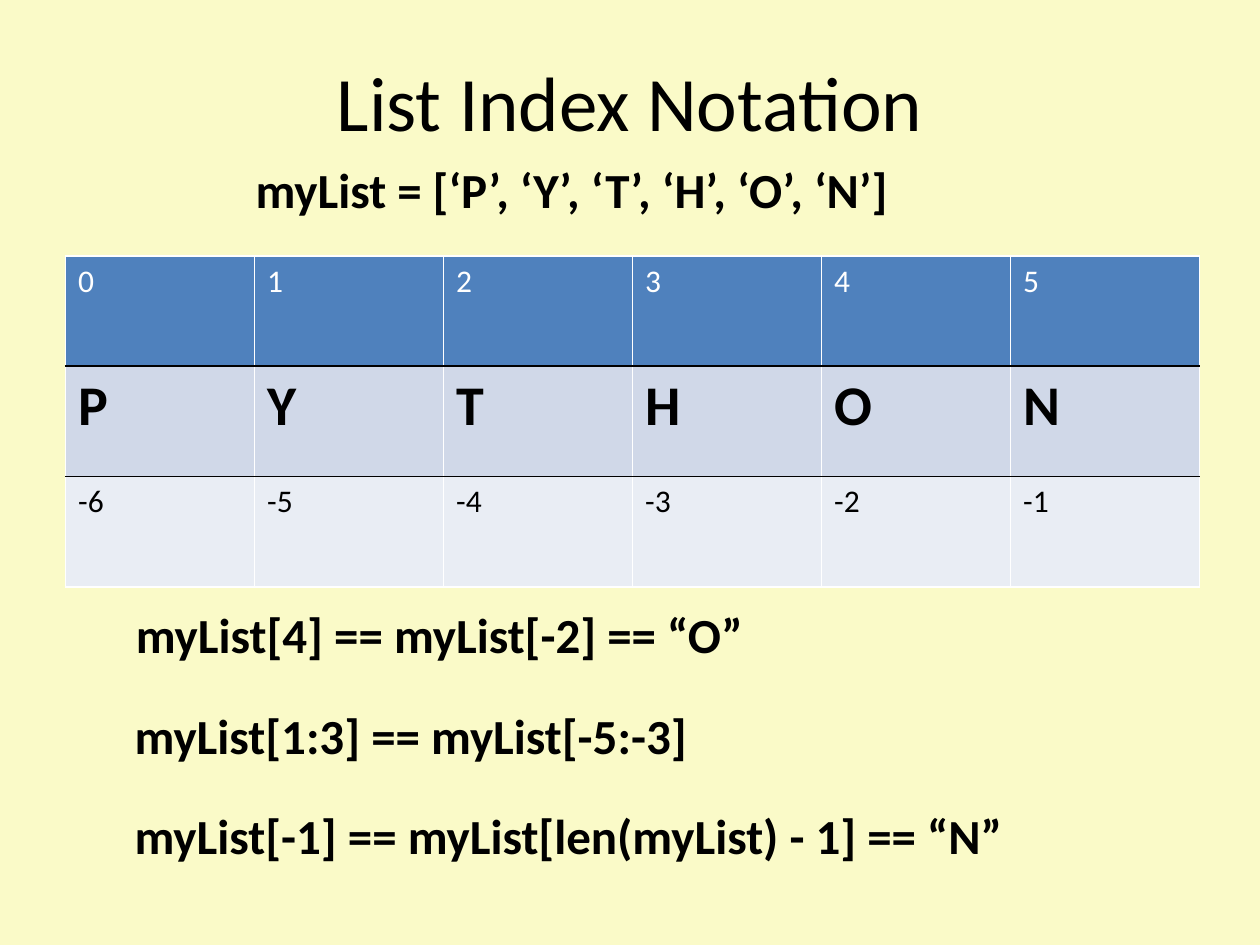
from dataclasses import dataclass

from lxml.etree import SubElement as Sub
from pptx import Presentation as Deck
from pptx.dml.color import RGBColor as Color
from pptx.enum.text import MSO_ANCHOR as Anchor, PP_ALIGN as Align
from pptx.oxml.ns import qn
from pptx.util import Inches as In, Pt


@dataclass(frozen=True)
class Theme:
    font: str = "Calibri"
    back: str = "FAFAC8"
    ink: str = "000000"
    white: str = "FFFFFF"
    head: str = "4F81BD"
    band: str = "D0D8E8"
    pale: str = "E9EDF4"
    title: int = 44
    big: int = 32
    code: int = 28
    small: int = 18
    line: int = 1


def write(frame, text, *, font, size, color, bold=False, align=Align.LEFT):
    para = frame.paragraphs[0]
    para.alignment = align
    run = para.add_run()
    run.text = text
    run.font.name = font
    run.font.size = Pt(size)
    run.font.bold = bold
    run.font.color.rgb = Color.from_string(color)


class Page:
    def __init__(self, deck, theme):
        self.theme = theme
        self.slide = deck.slides.add_slide(deck.slide_layouts[6])
        fill = self.slide.background.fill
        fill.solid()
        fill.fore_color.rgb = Color.from_string(theme.back)

    def text(self, text, left, top, width, height, *, anchor=Anchor.TOP, **style):
        box = self.slide.shapes.add_textbox(In(left), In(top), In(width), In(height))
        frame = box.text_frame
        frame.word_wrap = True
        frame.vertical_anchor = anchor
        write(frame, text, font=self.theme.font, color=self.theme.ink, **style)

    def edge(self, cell, top, base):
        props = cell._tc.get_or_add_tcPr()
        white = self.theme.white
        sides = {"L": white, "R": white, "T": top, "B": base}
        for side, color in sides.items():
            line = Sub(props, qn(f"a:ln{side}"), w=str(Pt(self.theme.line)))
            fill = Sub(line, qn("a:solidFill"))
            Sub(fill, qn("a:srgbClr"), val=color)

    def table(self, rows, left, top, width, height):
        count = len(rows[0][0])
        table = self.slide.shapes.add_table(
            len(rows), count, In(left), In(top), In(width), In(height)
        ).table
        for y, (words, fill, top, base, style) in enumerate(rows):
            for x, word in enumerate(words):
                cell = table.cell(y, x)
                self.edge(cell, top, base)
                cell.fill.solid()
                cell.fill.fore_color.rgb = Color.from_string(fill)
                write(cell.text_frame, word, font=self.theme.font, **style)


def main():
    theme = Theme()
    deck = Deck()
    deck.slide_width, deck.slide_height = In(10), In(7.5)
    page = Page(deck, theme)

    page.text("List Index Notation", 0.5, 0.17, 9, 1.25, size=theme.title,
              align=Align.CENTER, anchor=Anchor.MIDDLE)

    word = "PYTHON"
    count = len(word)
    ink, white = theme.ink, theme.white
    rows = [
        ([str(i) for i in range(count)], theme.head, white, ink,
         dict(size=theme.small, color=white)),
        (list(word), theme.band, ink, ink,
         dict(size=theme.big, color=ink, bold=True)),
        ([str(i) for i in range(-count, 0)], theme.pale, ink, white,
         dict(size=theme.small, color=ink)),
    ]
    page.table(rows, 0.52, 2.03, 9, 2.63)

    lines = [
        ("myList[4] == myList[-2] == “O”", 0.98, 4.75, 5.04),
        ("myList[1:3] == myList[-5:-3]", 0.97, 5.55, 4.88),
        ("myList[-1] == myList[len(myList) - 1] == “N”", 0.97, 6.34, 7.66),
        ("myList = [‘P’, ‘Y’, ‘T’, ‘H’, ‘O’, ‘N’]", 1.93, 1.22, 6.46),
    ]
    for text, left, top, width in lines:
        page.text(text, left, top, width, 0.57, size=theme.code, bold=True)

    deck.save("out.pptx")


if __name__ == "__main__":
    main()
